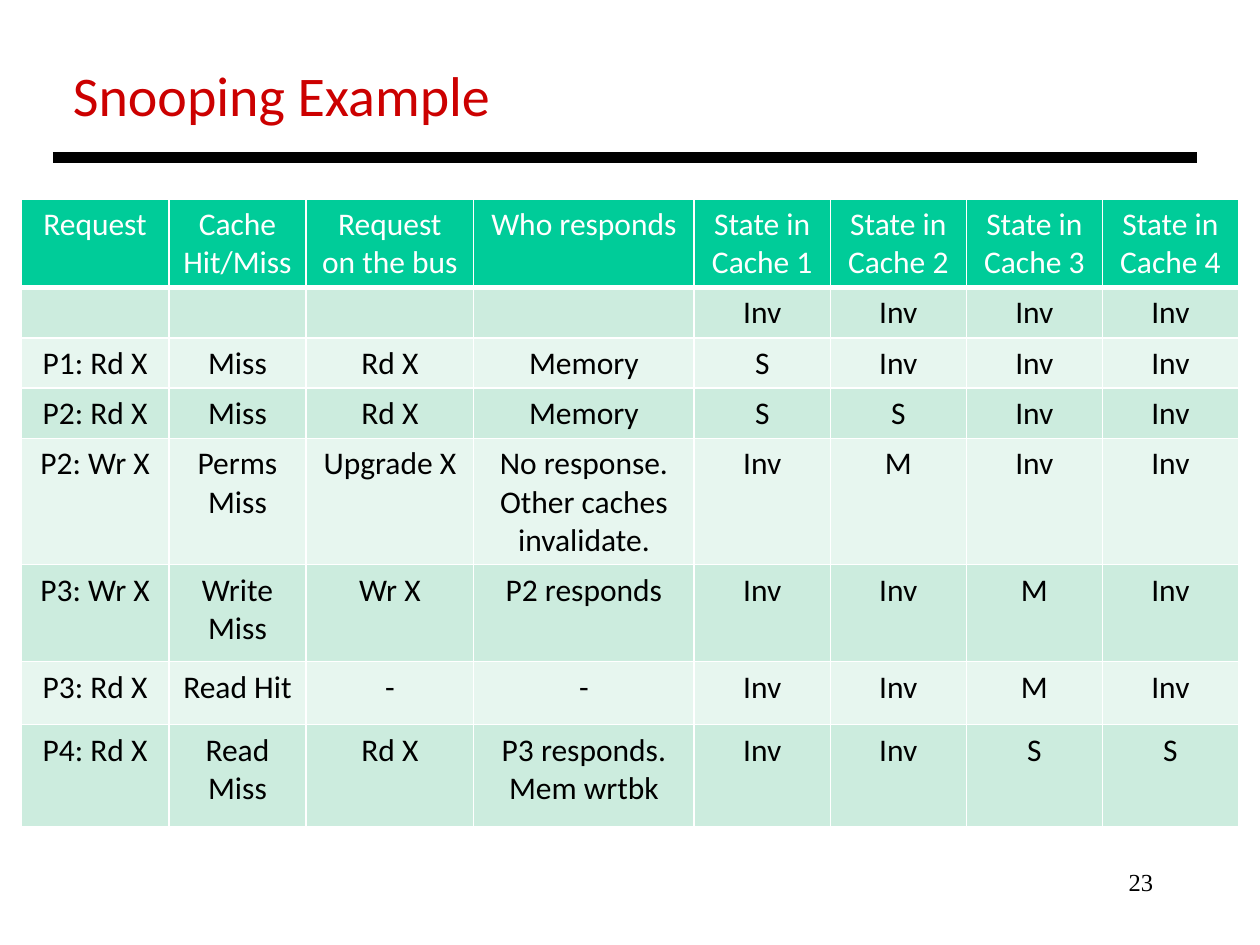
"""Build the Snooping Example slide with its cache state table."""
from lxml import etree
from pptx import Presentation
from pptx.dml.color import RGBColor
from pptx.enum.shapes import MSO_CONNECTOR
from pptx.enum.text import PP_ALIGN
from pptx.oxml.ns import qn
from pptx.util import Inches, Pt

STRAIGHT = MSO_CONNECTOR.STRAIGHT
LEFT, CENTER, RIGHT = PP_ALIGN.LEFT, PP_ALIGN.CENTER, PP_ALIGN.RIGHT
COLORS = {
    "title": "CC0000",
    "text": "000000",
    "white": "FFFFFF",
    "header": "00CC99",
    "dark_band": "CCECDE",
    "light_band": "E7F6EF",
}
COL_WIDTHS = [1.17, 1.09, 1.33, 1.75] + [1.08] * 4
ROW_HEIGHTS = [0.7, 0.4, 0.4, 0.4, 1, 0.77, 0.5, 0.81]
ROWS = [
    ["Request", "Cache\nHit/Miss", "Request\non the bus", "Who responds"]
    + [f"State in Cache {n}" for n in range(1, 5)],
    ["", "", "", "", "Inv", "Inv", "Inv", "Inv"],
    ["P1: Rd X", "Miss", "Rd X", "Memory", "S", "Inv", "Inv", "Inv"],
    ["P2: Rd X", "Miss", "Rd X", "Memory", "S", "S", "Inv", "Inv"],
    ["P2: Wr X", "Perms Miss", "Upgrade X",
     "No response.\nOther caches invalidate.", "Inv", "M", "Inv", "Inv"],
    ["P3: Wr X", "Write Miss", "Wr X", "P2 responds", "Inv", "Inv", "M", "Inv"],
    ["P3: Rd X", "Read Hit", "-", "-", "Inv", "Inv", "M", "Inv"],
    ["P4: Rd X", "Read Miss", "Rd X", "P3 responds. Mem wrtbk",
     "Inv", "Inv", "S", "S"],
]


def write(tf, text, size, color, align, font="Calibri"):
    for i, line in enumerate(text.split("\n")):
        p = tf.add_paragraph() if i else tf.paragraphs[0]
        p.alignment = align
        p.font.size = Pt(size)
        if line:
            r = p.add_run()
            r.text = line
            r.font.name = font
            r.font.size = Pt(size)
            r.font.bold = False
            r.font.color.rgb = RGBColor.from_string(COLORS[color])


def add_border(cell, side, width):
    ln = etree.SubElement(cell._tc.get_or_add_tcPr(), qn(f"a:ln{side}"), w=str(Pt(width)))
    fill = etree.SubElement(ln, qn("a:solidFill"))
    etree.SubElement(fill, qn("a:srgbClr"), val=COLORS["white"])


prs = Presentation()
prs.slide_width, prs.slide_height = Inches(10), Inches(7.5)
s = prs.slides.add_slide(prs.slide_layouts[6])

number = s.shapes.add_textbox(Inches(7.17), Inches(6.83), Inches(2.08), Inches(0.5))
number.text_frame.word_wrap = True
write(number.text_frame, "23", 14, "text", RIGHT, "Times New Roman")

title = s.shapes.add_textbox(Inches(0.48), Inches(0.43), Inches(3.55), Inches(0.64))
title.text_frame.word_wrap = False
write(title.text_frame, "Snooping Example", 32, "title", LEFT)

rule = s.shapes.add_connector(STRAIGHT, Inches(0.42), Inches(1.25), Inches(9.5), Inches(1.25))
rule.line.color.rgb = RGBColor.from_string(COLORS["text"])
rule.line.width = Pt(6)
etree.SubElement(rule._element.spPr, qn("a:effectLst"))

table = s.shapes.add_table(
    len(ROWS), len(COL_WIDTHS), Inches(0.17), Inches(1.58),
    Inches(sum(COL_WIDTHS)), Inches(sum(ROW_HEIGHTS))).table
for col, width in zip(table.columns, COL_WIDTHS):
    col.width = Inches(width)

for i, (row, height) in enumerate(zip(ROWS, ROW_HEIGHTS)):
    table.rows[i].height = Inches(height)
    band = "header" if i == 0 else "dark_band" if i % 2 else "light_band"
    for j, text in enumerate(row):
        cell = table.cell(i, j)
        write(cell.text_frame, text, 18, "text" if i else "white", CENTER)
        for side in "LRTB":
            header_edge = (i, side) in ((0, "B"), (1, "T"))
            add_border(cell, side, 3 if header_edge else 1)
        cell.fill.solid()
        cell.fill.fore_color.rgb = RGBColor.from_string(COLORS[band])

prs.save("out.pptx")
